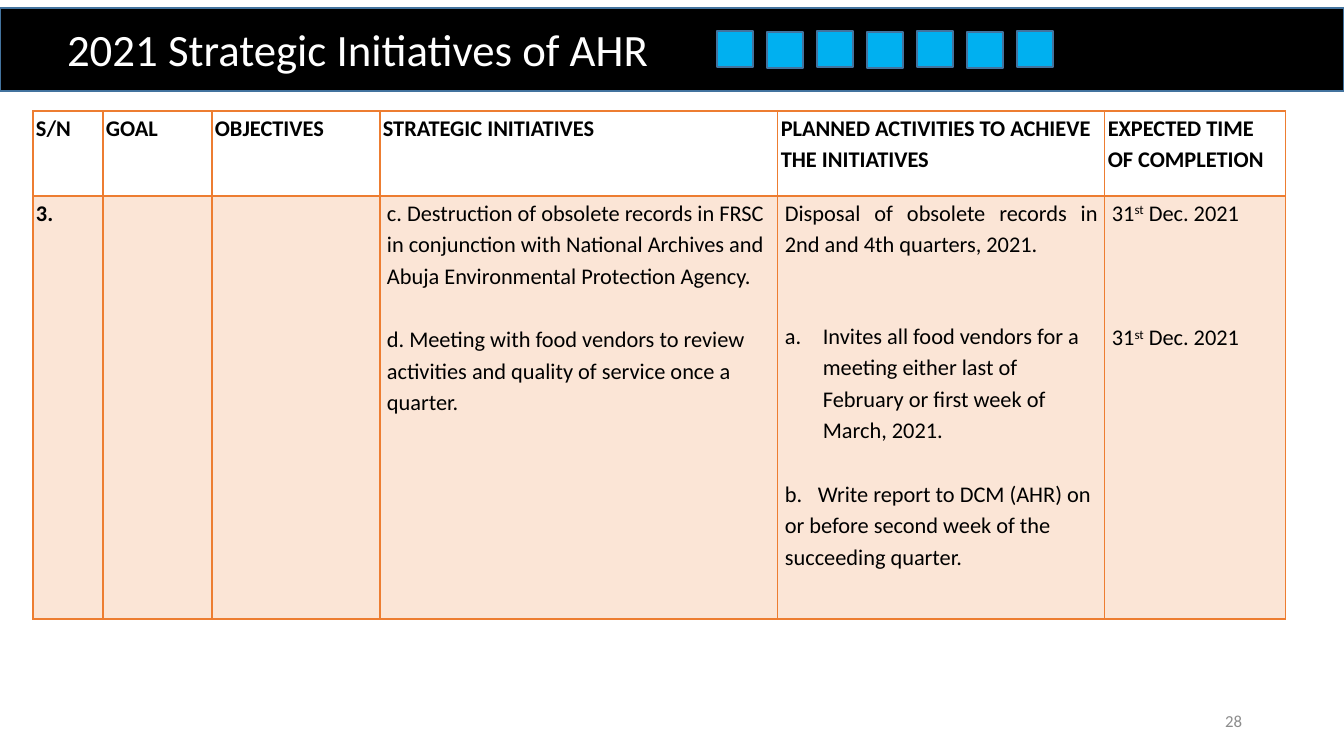
from lxml import etree
from pptx import Presentation, util as u
from pptx.dml.color import RGBColor
from pptx.enum import shapes, text
from pptx.oxml import ns

BLACK = RGBColor(0, 0, 0)
WHITE = RGBColor(255, 255, 255)
BLUE = RGBColor(0x00, 0xB0, 0xF0)
EDGE = RGBColor(0x43, 0x73, 0x9E)
ORANGE = RGBColor(0xED, 0x7D, 0x31)
PEACH = RGBColor(0xFB, 0xE5, 0xD6)
GREY = RGBColor(0x8C, 0x8C, 0x8C)
FONT = "Calibri"
SCALE = 914400 / 100.8

TITLE = "2021 Strategic Initiatives of AHR"
NUMBER = "28"
HEADS = ["S/N", "GOAL", "OBJECTIVES", "STRATEGIC INITIATIVES",
         "PLANNED ACTIVITIES TO ACHIEVE THE INITIATIVES",
         "EXPECTED TIME OF COMPLETION"]
DATE = ["31", "st", " Dec. 2021"]
BODY = [
    [{"runs": ["3."]}],
    [],
    [],
    [{"runs": ["c. Destruction of obsolete records in FRSC in conjunction with "
               "National Archives and Abuja Environmental Protection Agency."]},
     {"runs": ["d. Meeting with food vendors to review activities and quality "
               "of service once a quarter."], "gap": 32}],
    [{"runs": ["Disposal of obsolete records in 2nd and 4th quarters, 2021."],
      "align": text.PP_ALIGN.JUSTIFY},
     {"runs": ["Invites all food vendors for a meeting either last of February "
               "or first week of March, 2021."], "gap": 60, "list": True},
     {"runs": ["b.\tWrite report to DCM (AHR) on or before second week of the "
               "succeeding quarter."], "gap": 32, "tab": 33}],
    [{"runs": DATE}, {"runs": DATE, "gap": 93}],
]
COLS = [70, 109, 168, 398, 327, 181]
ROWS = [85, 423]


def px(n):
    return u.Emu(round(n * SCALE))


def box(x, y, w, h, color):
    rect = slide.shapes.add_shape(
        shapes.MSO_SHAPE.RECTANGLE, px(x), px(y), px(w), px(h))
    rect.shadow.inherit = False
    rect.fill.solid()
    rect.fill.fore_color.rgb = color
    rect.line.color.rgb = EDGE
    rect.line.width = u.Pt(1)


def write(para, words, size, color, bold=False):
    run = para.add_run()
    run.text = words
    font = run.font
    font.name, font.size, font.bold = FONT, u.Pt(size), bold
    font.color.rgb = color
    return run


def border(cell, low):
    props = cell._tc.get_or_add_tcPr()
    for i, side in enumerate(["lnL", "lnR", "lnT", "lnB"]):
        line = etree.Element(ns.qn("a:" + side))
        line.set("w", str(u.Pt(low if side == "lnB" else 1)))
        fill = etree.SubElement(line, ns.qn("a:solidFill"))
        etree.SubElement(fill, ns.qn("a:srgbClr")).set("val", str(ORANGE))
        props.insert(i, line)


def fill_cell(cell, paras, bold, inset):
    cell.margin_left = cell.margin_right = px(inset)
    cell.margin_top = cell.margin_bottom = 0
    frame = cell.text_frame
    for i, item in enumerate(paras):
        para = frame.add_paragraph() if i else frame.paragraphs[0]
        para.line_spacing = 1.15
        para.space_before = px(item.get("gap", 0))
        para.alignment = item.get("align", text.PP_ALIGN.LEFT)
        props = para._p.get_or_add_pPr()
        if "list" in item:
            props.set("marL", str(px(38)))
            props.set("indent", str(px(-38)))
            mark = etree.SubElement(props, ns.qn("a:buAutoNum"))
            mark.set("type", "alphaLcPeriod")
        if "tab" in item:
            tabs = etree.SubElement(props, ns.qn("a:tabLst"))
            stop = etree.SubElement(tabs, ns.qn("a:tab"))
            stop.set("pos", str(px(item["tab"])))
            stop.set("algn", "l")
        for words in item["runs"]:
            run = write(para, words, 16, BLACK, bold)
            if words == "st":
                run._r.get_or_add_rPr().set("baseline", "30000")


deck = Presentation()
deck.slide_width, deck.slide_height = px(1344), px(756)
slide = deck.slides.add_slide(deck.slide_layouts[5])

box(0, 8, 1344, 83, BLACK)

title = slide.shapes.title
slide.shapes._spTree.append(title._element)
title.left, title.top, title.width, title.height = map(px, (57, 17, 1229, 65))
frame = title.text_frame
frame.word_wrap = True
frame.auto_size = text.MSO_AUTO_SIZE.NONE
frame.vertical_anchor = text.MSO_ANCHOR.TOP
frame.paragraphs[0].alignment = text.PP_ALIGN.LEFT
write(frame.paragraphs[0], TITLE, 32, WHITE)

grid = slide.shapes.add_table(
    len(ROWS), len(COLS), px(33), px(111), px(sum(COLS)), px(sum(ROWS))).table
grid.first_row = grid.horz_banding = False
for col, wide in zip(grid.columns, COLS):
    col.width = px(wide)
for row, high in zip(grid.rows, ROWS):
    row.height = px(high)
for c, (head, paras) in enumerate(zip(HEADS, BODY)):
    top, low = grid.cell(0, c), grid.cell(1, c)
    fill_cell(top, [{"runs": [head]}], True, 3)
    fill_cell(low, paras, c == 0, 3 if c == 0 else 7)
    top.fill.background()
    low.fill.solid()
    low.fill.fore_color.rgb = PEACH
    border(top, 2)
    border(low, 1)

for i in range(7):
    box(717 + 50 * i, 31 + i % 2, 36, 36, BLUE)

page = slide.shapes.add_textbox(px(950), px(701), px(302), px(40)).text_frame
page.word_wrap = True
page.vertical_anchor = text.MSO_ANCHOR.MIDDLE
page.paragraphs[0].alignment = text.PP_ALIGN.RIGHT
write(page.paragraphs[0], NUMBER, 12, GREY)

deck.save("out.pptx")
